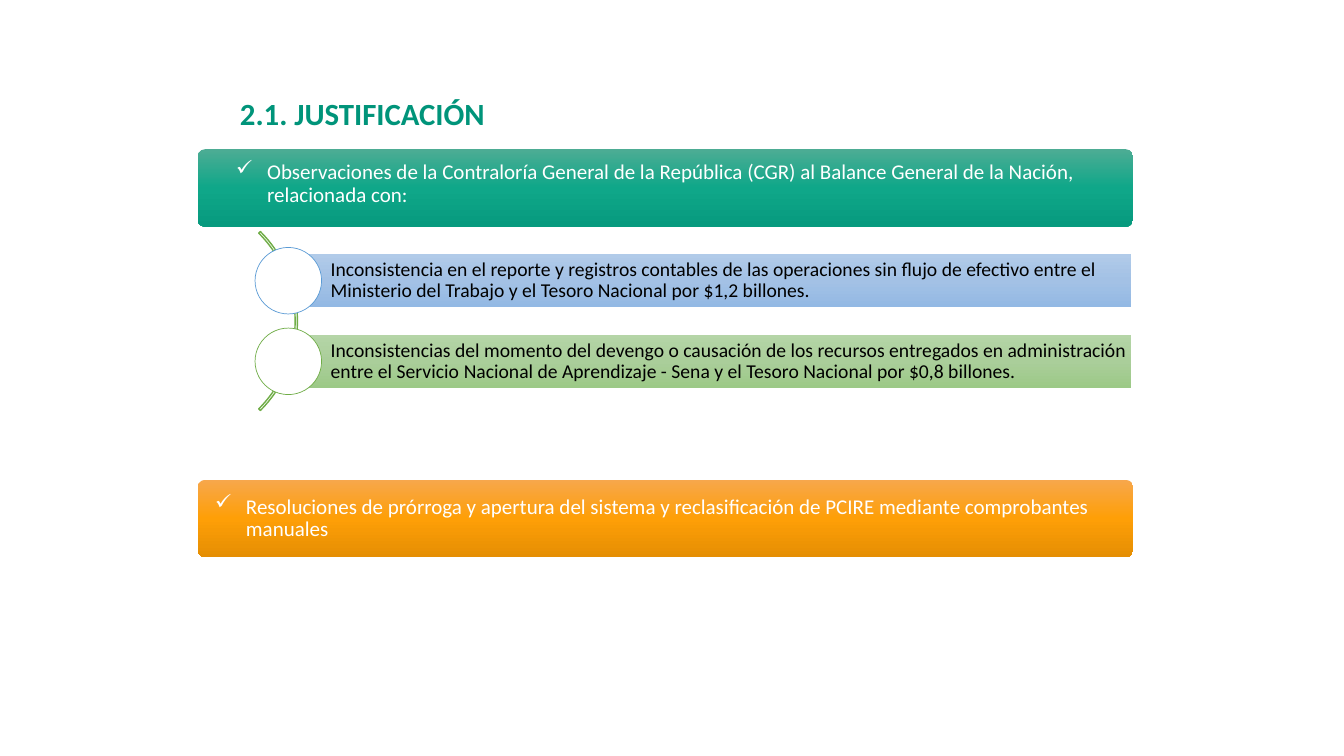
from lxml.etree import SubElement
from pptx import Presentation
from pptx.dml.color import RGBColor
from pptx.enum.shapes import MSO_SHAPE
from pptx.enum.text import MSO_ANCHOR, MSO_AUTO_SIZE, PP_ALIGN
from pptx.oxml.ns import qn
from pptx.util import Inches, Pt

GREEN = "70AD47"
ROWS = [
    ("Inconsistencia en el reporte y registros contables de las operaciones sin "
     "flujo de efectivo entre el Ministerio del Trabajo y el Tesoro Nacional por "
     "$1,2 billones.", ("B1CBE9", "A3C1E5", "93B9E4"), "5B9BD5"),
    ("Inconsistencias del momento del devengo o causación de los recursos "
     "entregados en administración entre el Servicio \tNacional de Aprendizaje - "
     "Sena y el Tesoro Nacional por $0,8 billones.",
     ("B5D5A7", "AACE9A", "9CC987"), GREEN),
]


def color(code):
    return RGBColor.from_string(code)


def shade(shape, codes):
    """Fill with an even top-to-bottom gradient."""
    shape.fill.gradient()
    shape.fill.gradient_angle = 270
    stops = shape.fill._fill._gradFill.find(qn("a:gsLst"))
    for stop in list(stops):
        stops.remove(stop)
    for i, code in enumerate(codes):
        stop = SubElement(stops, qn("a:gs"), pos=str(100000 * i // (len(codes) - 1)))
        SubElement(stop, qn("a:srgbClr"), val=code)


def add_form(slide, kind, box, line=None, width=1):
    form = slide.shapes.add_shape(kind, *map(Inches, box))
    form.shadow.inherit = False
    if line:
        form.line.color.rgb = color(line)
        form.line.width = Pt(width)
    else:
        form.line.fill.background()
    return form


def set_frame(frame, pads, anchor):
    frame.word_wrap = True
    frame.auto_size = MSO_AUTO_SIZE.NONE
    frame.vertical_anchor = anchor
    (frame.margin_left, frame.margin_top,
     frame.margin_right, frame.margin_bottom) = map(Inches, pads)


def add_run(para, text, size, code, bold=False):
    run = para.add_run()
    run.text = text
    run.font.name = "Calibri"
    run.font.size = Pt(size)
    run.font.bold = bold
    run.font.color.rgb = color(code)


def add_title(slide, text):
    title = slide.shapes.title
    title.left, title.top, title.width, title.height = map(
        Inches, (2.28, 0.89, 6.1, 0.79))
    set_frame(title.text_frame, (0.1, 0.05, 0.1, 0.05), MSO_ANCHOR.TOP)
    para = title.text_frame.paragraphs[0]
    para.alignment = PP_ALIGN.LEFT
    add_run(para, text, 22, "00947A", True)


def add_arc(slide):
    arc = add_form(slide, MSO_SHAPE.BLOCK_ARC, (0.44, 1.93, 2.51, 2.51), GREEN)
    arc.fill.background()
    for i, value in enumerate((189, 27, 0.009)):
        arc.adjustments[i] = value


def add_row(slide, top, text, codes, line):
    bar = add_form(slide, MSO_SHAPE.RECTANGLE, (2.86, top, 8.36, 0.53))
    shade(bar, codes)
    set_frame(bar.text_frame, (0.42, 0.04, 0.04, 0.04), MSO_ANCHOR.MIDDLE)
    para = bar.text_frame.paragraphs[0]
    if "\t" in text:
        tabs = SubElement(para._p.get_or_add_pPr(), qn("a:tabLst"))
        SubElement(tabs, qn("a:tab"), pos=str(Inches(1.32)), algn="l")
    para.alignment = PP_ALIGN.LEFT
    para.line_spacing = 0.9
    add_run(para, text, 14, "000000")
    dot = add_form(slide, MSO_SHAPE.OVAL, (2.53, top - 0.065, 0.66, 0.66), line, 0.5)
    dot.fill.solid()
    dot.fill.fore_color.rgb = color("FFFFFF")


def add_card(slide, top, codes, text, spot, pad, anchor):
    card = add_form(slide, MSO_SHAPE.ROUNDED_RECTANGLE, (1.96, top, 9.28, 0.77))
    card.adjustments[0] = 0.1
    shade(card, codes)
    label = slide.shapes.add_textbox(*map(Inches, (*spot, 9.01, 0.73)))
    set_frame(label.text_frame, (0.03, pad, 0.03, 0.02), anchor)
    para = label.text_frame.paragraphs[0]
    props = para._p.get_or_add_pPr()
    props.set("marL", str(Inches(0.31)))
    props.set("indent", str(-Inches(0.31)))
    SubElement(props, qn("a:buFont"), typeface="Wingdings")
    SubElement(props, qn("a:buChar"), char="ü")
    para.line_spacing = 0.9
    add_run(para, text, 15, "FFFFFF")


def main():
    deck = Presentation()
    deck.slide_width, deck.slide_height = Inches(13.33), Inches(7.5)
    slide = deck.slides.add_slide(deck.slide_layouts[5])
    add_title(slide, "2.1. JUSTIFICACIÓN")

    # Findings along the arc
    add_arc(slide)
    for i, row in enumerate(ROWS):
        add_row(slide, 2.52 + 0.8 * i, *row)

    # Main reasons
    add_card(slide, 1.48, ("4DAC94", "0FA789", "079A7E"),
             "Observaciones de la Contraloría General de la República (CGR) al "
             "Balance General de la Nación, relacionada con:",
             (2.31, 1.6), 0, MSO_ANCHOR.TOP)
    add_card(slide, 4.76, ("F7A74C", "FE9F07", "E58E03"),
             "Resoluciones de prórroga y apertura del sistema y reclasificación de "
             "PCIRE mediante comprobantes manuales",
             (2.1, 4.78), 0.02, MSO_ANCHOR.MIDDLE)
    deck.save("out.pptx")


if __name__ == "__main__":
    main()
